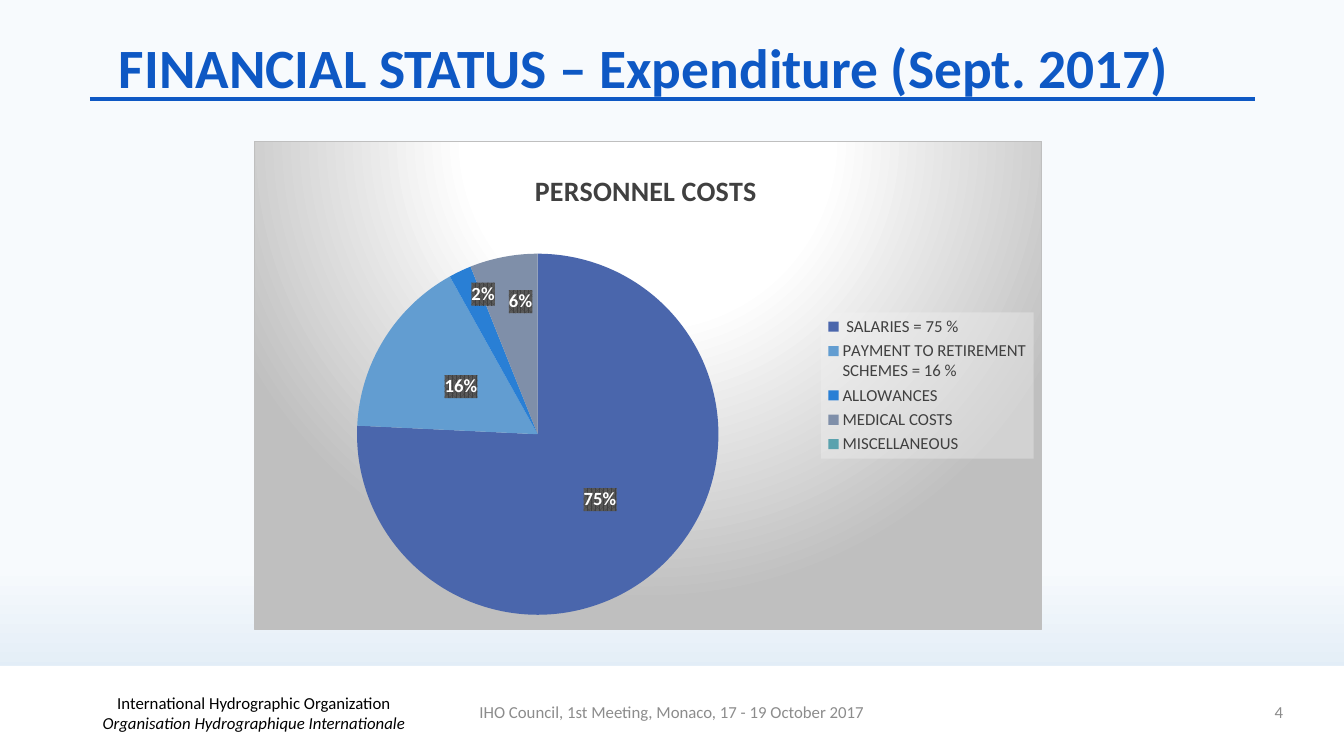
import copy

import lxml.etree
import pptx
import pptx.chart.data
import pptx.dml.color
import pptx.enum.chart
import pptx.enum.shapes
import pptx.enum.text
import pptx.oxml
import pptx.oxml.ns
import pptx.util

RGB = pptx.dml.color.RGBColor
ALIGN = pptx.enum.text.PP_ALIGN
BLUE = RGB(0x0E, 0x58, 0xC4)
WHITE = RGB(0xFF, 0xFF, 0xFF)
BLACK = RGB(0, 0, 0)
GREY = RGB(0x8C, 0x8C, 0x8C)
DARK = RGB(0x40, 0x40, 0x40)
SKY_TOP = RGB(0xF7, 0xFA, 0xFD)
SKY_BOTTOM = RGB(0xD0, 0xE2, 0xF1)

COSTS = [
    (" SALARIES = 75 %", 75, RGB(0x4A, 0x66, 0xAC)),
    ("PAYMENT TO RETIREMENT SCHEMES = 16 %", 16, RGB(0x62, 0x9D, 0xD1)),
    ("ALLOWANCES", 2, RGB(0x29, 0x7F, 0xD5)),
    ("MEDICAL COSTS", 6, RGB(0x7F, 0x8F, 0xA9)),
    ("MISCELLANEOUS", 0, RGB(0x5A, 0xA2, 0xAE)),
]
LABEL_SHIFTS = {2: (-0.02, -0.12), 3: (0, -0.09)}

CHART_FILL = """<c:spPr %s><a:gradFill><a:gsLst>
<a:gs pos="0"><a:srgbClr val="FFFFFF"/></a:gs>
<a:gs pos="39000"><a:srgbClr val="FFFFFF"/></a:gs>
<a:gs pos="100000"><a:srgbClr val="BFBFBF"/></a:gs></a:gsLst>
<a:path path="circle"><a:fillToRect l="50000" t="-80000" r="50000" b="180000"/></a:path></a:gradFill>
<a:ln w="9525"><a:solidFill><a:srgbClr val="BFBFBF"/></a:solidFill></a:ln></c:spPr>"""
LEGEND_FILL = """<c:spPr %s><a:solidFill><a:srgbClr val="F2F2F2">
<a:alpha val="39000"/></a:srgbClr></a:solidFill></c:spPr>"""
LABEL_FILL = """<c:spPr %s><a:pattFill prst="pct75"><a:fgClr><a:srgbClr val="404040"/></a:fgClr>
<a:bgClr><a:srgbClr val="595959"/></a:bgClr></a:pattFill></c:spPr>"""


def xml(text):
    """Parse a chart fragment with its namespaces filled in."""
    return pptx.oxml.parse_xml(text % pptx.oxml.ns.nsdecls("c", "a"))


def layout(inner=False, **places):
    """Return a manual layout; places are fractions of the chart."""
    modes = "".join(f'<c:{k}Mode val="edge"/>' for k in "xy") if places.pop("edge", True) else ""
    target = '<c:layoutTarget val="inner"/>' if inner else ""
    values = "".join(f'<c:{k} val="{v}"/>' for k, v in places.items())
    return xml(f"<c:layout %s><c:manualLayout>{target}{modes}{values}</c:manualLayout></c:layout>")


class Deck:
    """Hold the style and the current slide."""

    font = "Calibri"

    def __init__(self, width, height):
        """Open a presentation with one blank slide."""
        self.prs = pptx.Presentation()
        self.prs.slide_width, self.prs.slide_height = self.px(width, height)
        self.s = self.prs.slides.add_slide(self.prs.slide_layouts[6])

    @staticmethod
    def px(*lengths):
        """Turn px into EMU."""
        return [pptx.util.Emu(round(n * 914400 / 100.8)) for n in lengths]

    def style(self, font, size, color, **formats):
        """Set a font from a dict of format values."""
        formats.update(name=self.font, size=pptx.util.Pt(size))
        for key, value in formats.items():
            setattr(font, key, value)
        font.color.rgb = color

    def background(self, top, bottom):
        """Fill the slide with a vertical gradient."""
        fill = self.s.background.fill
        fill.gradient()
        fill.gradient_angle = 270
        for stop, color, position in zip(fill.gradient_stops, (top, bottom), (0.75, 1)):
            stop.color.rgb, stop.position = color, position

    def line(self, x1, y1, x2, y2, color, width):
        """Draw a straight line."""
        straight = pptx.enum.shapes.MSO_CONNECTOR.STRAIGHT
        c = self.s.shapes.add_connector(straight, *self.px(x1, y1, x2, y2))
        c.line.color.rgb, c.line.width = color, pptx.util.Pt(width)
        lxml.etree.SubElement(c._element.spPr, pptx.oxml.ns.qn("a:effectLst"))

    def band(self, x, y, w, h, color):
        """Draw a plain rectangle."""
        kind = pptx.enum.shapes.MSO_SHAPE.RECTANGLE
        sp = self.s.shapes.add_shape(kind, *self.px(x, y, w, h))
        sp.shadow.inherit = False
        sp.fill.solid()
        sp.fill.fore_color.rgb = color
        sp.line.fill.background()

    def text(self, x, y, w, h, lines, size, color, align, spacing=1.0, bold=False):
        """Write (text, italic) lines in one paragraph."""
        tf = self.s.shapes.add_textbox(*self.px(x, y, w, h)).text_frame
        tf.word_wrap = True
        tf.vertical_anchor = pptx.enum.text.MSO_ANCHOR.MIDDLE
        p = tf.paragraphs[0]
        p.alignment, p.line_spacing = align, spacing
        for i, (words, italic) in enumerate(lines):
            if i:
                p.add_line_break()
            r = p.add_run()
            r.text = words
            self.style(r.font, size, color, bold=bold, italic=italic)

    def pie(self, x, y, w, h, title, rows, shifts):
        """Add a pie chart of (name, value, colour) rows."""
        data = pptx.chart.data.CategoryChartData()
        data.categories = [row[0] for row in rows]
        data.add_series("Series 1", [row[1] for row in rows])
        kind = pptx.enum.chart.XL_CHART_TYPE.PIE
        chart = self.s.shapes.add_chart(kind, *self.px(x, y, w, h), data).chart
        self.style(chart.font, 10, BLACK)
        chart._chartSpace.chart.addnext(xml(CHART_FILL))

        chart.has_title = True
        tf = chart.chart_title.text_frame
        tf.text = title
        self.style(tf.paragraphs[0].runs[0].font, 20, DARK, bold=True)
        chart.chart_title.include_in_layout = False
        t = chart.chart_title._element
        for old in t.findall(pptx.oxml.ns.qn("c:layout")):
            t.remove(old)
        t.find(pptx.oxml.ns.qn("c:tx")).addnext(layout(x=0.35, y=0.05))

        chart.has_legend = True
        legend = chart.legend
        legend.position = pptx.enum.chart.XL_LEGEND_POSITION.RIGHT
        legend.include_in_layout = False
        self.style(legend.font, 12, DARK)
        node = legend._element
        for old in node.findall(pptx.oxml.ns.qn("c:layout")):
            node.remove(old)
        node.find(pptx.oxml.ns.qn("c:legendPos")).addnext(layout(x=0.72, y=0.35, w=0.27, h=0.3))
        node.find(pptx.oxml.ns.qn("c:txPr")).addprevious(xml(LEGEND_FILL))

        plot = chart.plots[0]
        plot.vary_by_categories = True
        area = plot._element.getparent()
        for old in area.findall(pptx.oxml.ns.qn("c:layout")):
            area.remove(old)
        area.insert(0, layout(inner=True, x=0.13, y=0.23, w=0.46, h=0.74))
        for i, row in enumerate(rows):
            fill = plot.series[0].points[i].format.fill
            fill.solid()
            fill.fore_color.rgb = row[2]
        self.labels(plot.series[0].data_labels, shifts)

    def labels(self, labels, shifts):
        """Style the labels and move those listed in shifts."""
        formats = dict(show_value=True, show_percentage=False, number_format='0"%"',
                       number_format_is_linked=False,
                       position=pptx.enum.chart.XL_LABEL_POSITION.CENTER)
        for key, value in formats.items():
            setattr(labels, key, value)
        self.style(labels.font, 13.3, WHITE, bold=True)
        node = labels._element
        node.find(pptx.oxml.ns.qn("c:txPr")).addprevious(xml(LABEL_FILL))
        shared = [c for c in node if not c.tag.endswith("showLeaderLines")]
        for place, (i, (dx, dy)) in enumerate(shifts.items()):
            label = xml(f'<c:dLbl %s><c:idx val="{i}"/></c:dLbl>')
            label.append(layout(edge=False, x=dx, y=dy))
            label.extend(copy.deepcopy(c) for c in shared)
            node.insert(place, label)


def main():
    """Build the expenditure slide."""
    deck = Deck(1344, 756)
    deck.background(SKY_TOP, SKY_BOTTOM)
    deck.line(90, 99, 1255, 99, BLUE, 2.25)
    deck.band(0, 666, 1344, 90, WHITE)
    deck.text(27, 693, 454, 40, [("International Hydrographic Organization", False),
                                 ("Organisation Hydrographique Internationale", True)],
              12, BLACK, ALIGN.CENTER)
    deck.text(445, 692, 454, 40, [("IHO Council, 1st Meeting, Monaco, 17 - 19 October 2017", False)],
              12, GREY, ALIGN.CENTER)
    deck.text(991, 692, 302, 40, [("4", False)], 12, GREY, ALIGN.RIGHT)
    deck.text(109, 45, 1159, 59, [("FINANCIAL STATUS – Expenditure (Sept. 2017)", False)],
              39.6, BLUE, ALIGN.LEFT, spacing=0.7, bold=True)
    deck.pie(254, 141, 788, 489, "PERSONNEL COSTS", COSTS, LABEL_SHIFTS)
    deck.prs.save("out.pptx")


if __name__ == "__main__":
    main()
